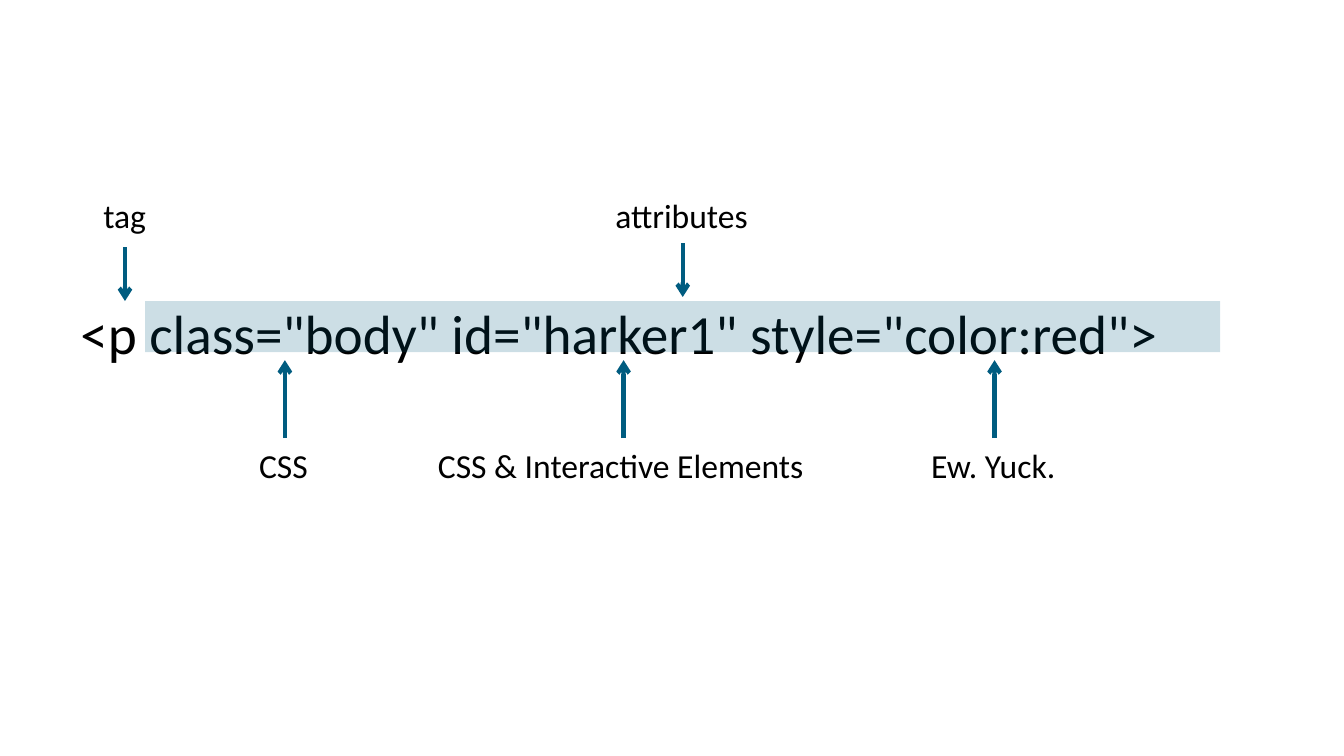
from dataclasses import dataclass
from typing import Any

from lxml import etree
from pptx import Presentation
from pptx import util as u
from pptx.dml.color import RGBColor
from pptx.enum import shapes, text
from pptx.oxml.ns import qn


def rgb(value):
    return RGBColor.from_string(value)


@dataclass
class Diagram:
    s: Any
    font: str = "Calibri"
    ink: str = "000000"
    accent: str = "005C80"

    def text(self, content, x, y, w, h, size, wrap=False):
        tf = self.s.shapes.add_textbox(*map(u.Inches, (x, y, w, h))).text_frame
        tf.word_wrap = wrap
        tf.vertical_anchor = text.MSO_ANCHOR.TOP
        p = tf.paragraphs[0]
        p.text = content
        p.font.name = self.font
        p.font.size = u.Pt(size)
        p.font.color.rgb = rgb(self.ink)

    def label(self, content, x, y, w):
        self.text(content, x, y, w, 0.4, 18)

    def highlight(self, x, y, w, h, opacity):
        """Draw a see-through band; opacity is a percentage."""
        sp = self.s.shapes.add_shape(
            shapes.MSO_SHAPE.RECTANGLE, *map(u.Inches, (x, y, w, h)))
        sp.shadow.inherit = False
        sp.line.fill.background()
        sp.fill.solid()
        sp.fill.fore_color.rgb = rgb(self.accent)
        color = sp._element.spPr.find(qn("a:solidFill"))[0]
        etree.SubElement(color, qn("a:alpha"), val=str(opacity * 1000))

    def arrow(self, x, start, end):
        """Draw a vertical arrow with its head at end."""
        line = self.s.shapes.add_connector(
            shapes.MSO_CONNECTOR.STRAIGHT,
            *map(u.Inches, (x, start, x, end)))
        line.line.color.rgb = rgb(self.accent)
        line.line.width = u.Pt(2.25)
        etree.SubElement(line.line._get_or_add_ln(), qn("a:tailEnd"), type="arrow")
        etree.SubElement(line._element.spPr, qn("a:effectLst"))


def main():
    prs = Presentation()
    prs.slide_width = u.Inches(10)
    prs.slide_height = prs.slide_width * 9 // 16
    d = Diagram(prs.slides.add_slide(prs.slide_layouts[6]))

    d.text('<p class="body" id="harker1" style="color:red">',
           0.5, 2.18, 9, 0.5, 29.6, wrap=True)
    d.highlight(1.08, 2.24, 8, 0.38, 20)

    # label, left, width, arrow x, arrow start
    for name, x, w, arrow_x, start in (
        ("tag", 0.67, 0.52, 0.93, 1.84),
        ("attributes", 4.48, 1.2, 5.08, 1.81),
    ):
        d.label(name, x, 1.4, w)
        d.arrow(arrow_x, start, start + 0.4)

    # label, left, width, arrow x
    for name, x, w, arrow_x in (
        ("CSS", 1.83, 0.57, 2.12),
        ("CSS & Interactive Elements", 3.16, 2.95, 4.64),
        ("Ew. Yuck.", 6.83, 1.13, 7.4),
    ):
        d.label(name, x, 3.26, w)
        d.arrow(arrow_x, 3.26, 2.68)

    prs.save("out.pptx")


if __name__ == "__main__":
    main()
